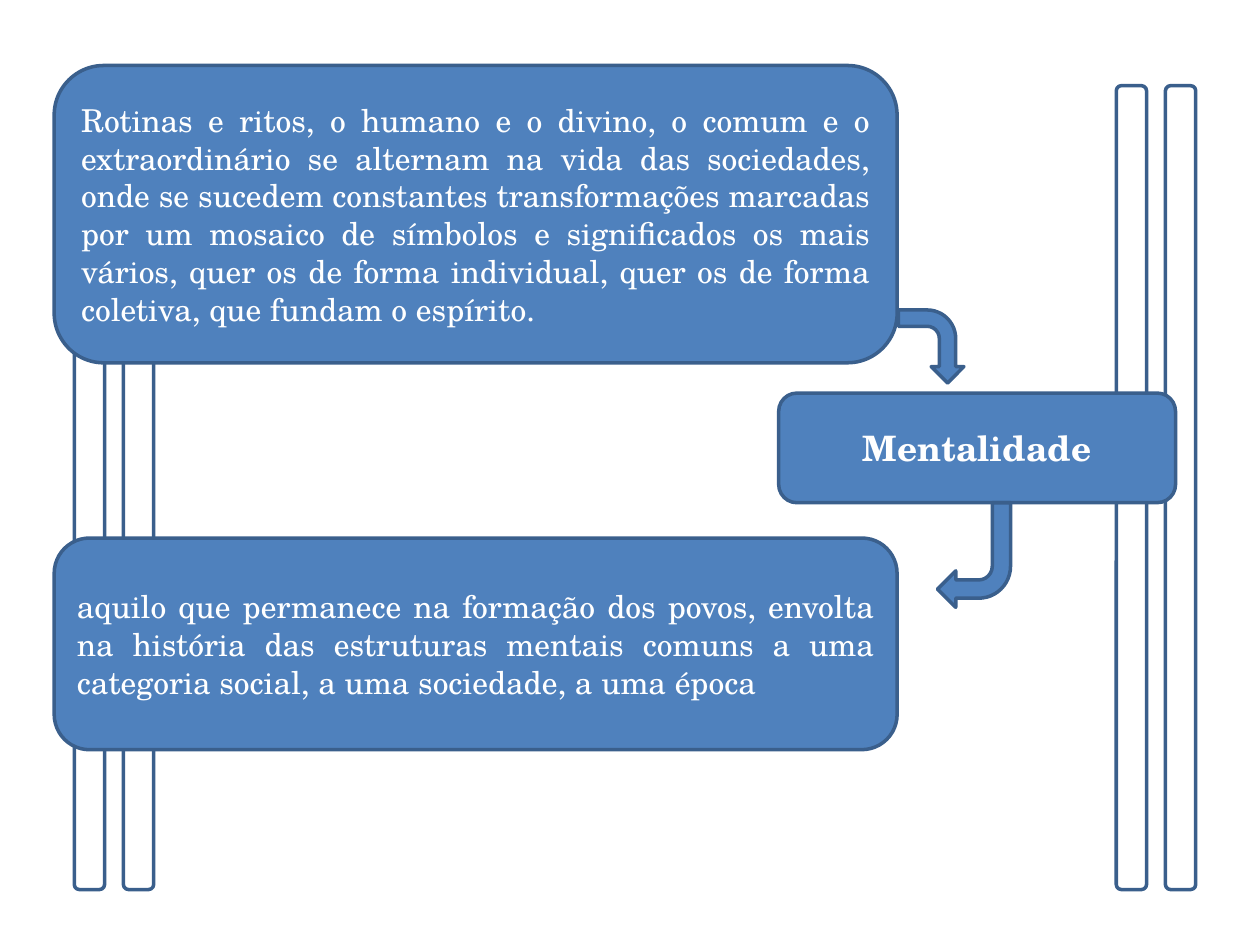
from pptx import Presentation
from pptx import util as u
from pptx.dml.color import RGBColor
from pptx.enum import shapes, text

FONT = "TeX Gyre Schola"
BLUE, EDGE, WHITE = "4F81BD", "3A5F8C", "FFFFFF"
ROUNDED = shapes.MSO_SHAPE.ROUNDED_RECTANGLE
BENT_ARROW = shapes.MSO_SHAPE.BENT_ARROW
JUSTIFY, CENTER = text.PP_ALIGN.JUSTIFY, text.PP_ALIGN.CENTER

# Content: place, wording, alignment, size, bold
ROUTINES = (
    (0.43, 0.52, 6.69, 2.36),
    "Rotinas e ritos, o humano e o divino, o comum e o extraordinário se alternam "
    "na vida das sociedades, onde se sucedem constantes transformações marcadas por "
    "um mosaico de símbolos e significados os mais vários, quer os de forma "
    "individual, quer os de forma coletiva, que fundam o espírito.",
    JUSTIFY, 18, False,
)
MENTALITY = ((6.18, 3.12, 3.15, 0.87), "Mentalidade", CENTER, 20, True)
DEFINITION = (
    (0.43, 4.27, 6.69, 1.68),
    "aquilo que permanece na formação dos povos, envolta na história das estruturas "
    "mentais comuns a uma categoria social, a uma sociedade, a uma época",
    JUSTIFY, 18, False,
)
# Arrows: place, rotation
ARROW_DOWN = ((7.1, 2.49, 0.58, 0.52), 90)
ARROW_BACK = ((7.44, 3.99, 0.58, 0.83), 180)
# Bars: a pair on each side
PAIR_LEFTS = (8.86, 0.59)
BAR_STEP, BAR_TOP, BAR_WIDTH, BAR_HEIGHT = 0.39, 0.68, 0.24, 6.38


def color(value):
    return RGBColor.from_string(value)


def add_outlined(slide, kind, place, fill):
    shape = slide.shapes.add_shape(kind, *(u.Inches(n) for n in place))
    shape.shadow.inherit = False
    shape.fill.solid()
    shape.fill.fore_color.rgb = color(fill)
    shape.line.color.rgb = color(EDGE)
    shape.line.width = u.Pt(2)
    return shape


def add_box(slide, place, words, alignment, size, bold):
    frame = add_outlined(slide, ROUNDED, place, BLUE).text_frame
    frame.word_wrap = True
    frame.vertical_anchor = text.MSO_ANCHOR.MIDDLE
    frame.text = words
    paragraph = frame.paragraphs[0]
    paragraph.alignment = alignment
    font = paragraph.runs[0].font
    font.name, font.size, font.bold = FONT, u.Pt(size), bold
    font.color.rgb = color(WHITE)


def add_arrow(slide, place, rotation):
    add_outlined(slide, BENT_ARROW, place, BLUE).rotation = rotation


def main():
    presentation = Presentation()
    presentation.slide_width, presentation.slide_height = u.Inches(10), u.Inches(7.5)
    slide = presentation.slides.add_slide(presentation.slide_layouts[6])

    # Side bars behind everything
    for left in PAIR_LEFTS:
        for index in range(2):
            place = (left + index * BAR_STEP, BAR_TOP, BAR_WIDTH, BAR_HEIGHT)
            add_outlined(slide, ROUNDED, place, WHITE)

    # Boxes and the arrows that link them
    add_box(slide, *ROUTINES)
    add_arrow(slide, *ARROW_DOWN)
    add_box(slide, *MENTALITY)
    add_box(slide, *DEFINITION)
    add_arrow(slide, *ARROW_BACK)

    presentation.save("out.pptx")


if __name__ == "__main__":
    main()
